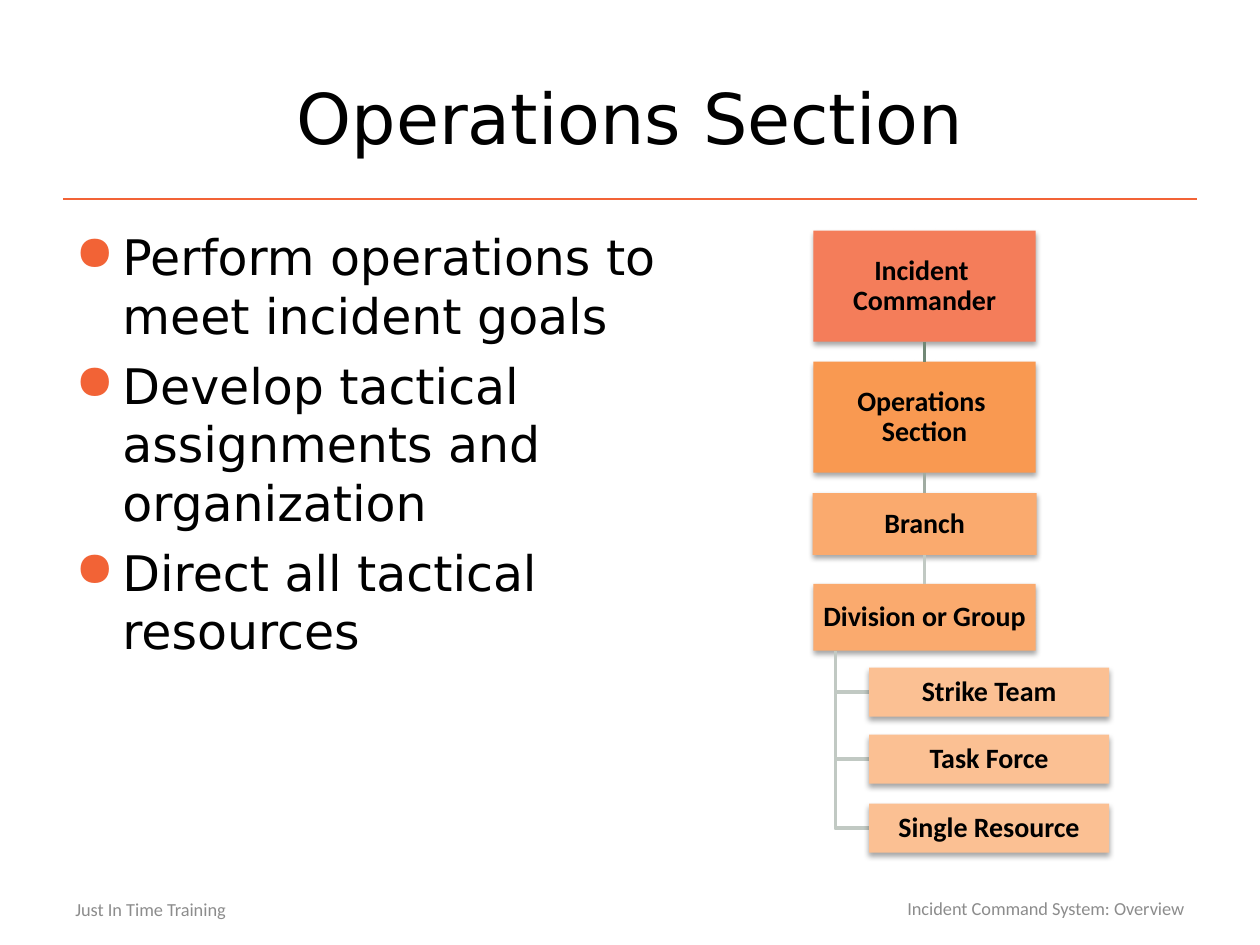
import pptx
import pptx.util
import pptx.dml.color
import pptx.enum.shapes
import pptx.enum.text
import pptx.oxml
import pptx.oxml.ns
from lxml import etree

Cm = pptx.util.Cm
Pt = pptx.util.Pt
ALIGN = pptx.enum.text.PP_ALIGN
ANCHOR = pptx.enum.text.MSO_ANCHOR

COLORS = {
    "accent": "F26336", "text": "000000", "footer": "8C8C8C",
    "commander": "F47D5A", "section": "F99951", "division": "FAAA6E", "team": "FBC093",
    "line_dark": "718876", "line_middle": "A0ACA2", "line_light": "C1C9C3",
}


def rgb(name):
    return pptx.dml.color.RGBColor.from_string(COLORS[name])


def add_element(parent, tag, **attributes):
    element = etree.SubElement(parent, pptx.oxml.ns.qn(tag))
    for key, value in attributes.items():
        element.set(key, value)
    return element


def write_text(shape, *texts, size, font="Calibri", color="text", bold=False,
               align=ALIGN.LEFT, anchor=ANCHOR.MIDDLE, line_spacing=None,
               space_before=0, bullet=None, margin=None):
    frame = shape.text_frame
    frame.word_wrap = True
    frame.vertical_anchor = anchor
    if margin is not None:
        frame.margin_left = frame.margin_right = Cm(margin)
        frame.margin_top = frame.margin_bottom = Cm(margin)
    for index, text in enumerate(texts):
        paragraph = frame.add_paragraph() if index else frame.paragraphs[0]
        paragraph.text = text
        if bullet:
            properties = paragraph._p.get_or_add_pPr()
            properties.set("marL", str(Cm(0.95)))
            properties.set("indent", str(-Cm(0.95)))
            add_element(add_element(properties, "a:buClr"), "a:srgbClr", val=COLORS["accent"])
            add_element(properties, "a:buChar", char=bullet)
        paragraph.alignment = align
        if line_spacing:
            paragraph.line_spacing = line_spacing
        if index and space_before:
            paragraph.space_before = Pt(space_before)
        for run in paragraph.runs:
            run.font.size = Pt(size)
            run.font.name = font
            run.font.bold = bold
            run.font.color.rgb = rgb(color)


def add_text(slide, left, top, width, height, *texts, **text_format):
    shape = slide.shapes.add_textbox(Cm(left), Cm(top), Cm(width), Cm(height))
    write_text(shape, *texts, **text_format)


def add_line(slide, left, top, right, bottom, color, width):
    line = slide.shapes.add_connector(
        pptx.enum.shapes.MSO_CONNECTOR.STRAIGHT, Cm(left), Cm(top), Cm(right), Cm(bottom))
    line.line.color.rgb = rgb(color)
    line.line.width = Pt(width)
    add_element(line._element.spPr, "a:effectLst")
    return line


def add_shadow(shape):
    shape.shadow.inherit = False
    effects = shape._element.spPr.find(pptx.oxml.ns.qn("a:effectLst"))
    shadow = add_element(effects, "a:outerShdw", blurRad=str(Pt(3.1)), dist=str(Pt(1.8)),
                         dir="5400000", rotWithShape="0")
    add_element(add_element(shadow, "a:srgbClr", val="000000"), "a:alpha", val="35000")


def add_unit(slide, left, top, width, height, text, fill):
    unit = slide.shapes.add_shape(
        pptx.enum.shapes.MSO_SHAPE.RECTANGLE, Cm(left), Cm(top), Cm(width), Cm(height))
    unit.fill.solid()
    unit.fill.fore_color.rgb = rgb(fill)
    unit.line.fill.background()
    add_shadow(unit)
    write_text(unit, text, size=16, bold=True, align=ALIGN.CENTER,
               line_spacing=0.9, margin=0.03)
    return unit


def add_branch_line(slide, left, top, right, bottom):
    builder = slide.shapes.build_freeform(Cm(left), Cm(top))
    builder.add_line_segments([(Cm(left), Cm(bottom)), (Cm(right), Cm(bottom))], close=False)
    shape = builder.convert_to_shape()
    shape.fill.background()
    shape.line.color.rgb = rgb("line_light")
    shape.line.width = Pt(2)
    shape.shadow.inherit = False


def add_header(slide, left, top, width, height):
    add_line(slide, left, top + height, left + width, top + height, "accent", 1.25)
    add_text(slide, left, top, width, 3.18, "Operations Section",
             size=40, font="DejaVu Sans", align=ALIGN.CENTER)


def add_duties(slide, left, top, width, height):
    add_text(slide, left, top, width, height,
             "Perform operations to meet incident goals",
             "Develop tactical assignments and organization",
             "Direct all tactical resources",
             size=28, font="DejaVu Sans", anchor=ANCHOR.TOP, space_before=6, bullet="●")


def add_organization(slide, left, top, width):
    chain_width = 4.52
    center = left + chain_width / 2
    chain = [
        ("Incident \vCommander", 0, 4.48, 2.24, "commander", None),
        ("Operations \vSection", 2.64, 4.48, 2.24, "section", "line_dark"),
        ("Branch", 5.29, chain_width, 1.25, "division", "line_middle"),
        ("Division or Group", 7.12, 4.48, 1.35, "division", "line_light"),
    ]
    above = None
    chain_bottom = top
    for text, offset, unit_width, height, fill, line_color in chain:
        unit = add_unit(slide, center - unit_width / 2, top + offset, unit_width, height,
                        text, fill)
        if above:
            line = add_line(slide, center, chain_bottom, center, top + offset, line_color, 2)
            line.begin_connect(above, 2)
            line.end_connect(unit, 0)
        above = unit
        chain_bottom = top + offset + height

    team_width, team_height = 4.84, 0.99
    team_left = left + width - team_width
    for text, offset in [("Strike Team", 8.81), ("Task Force", 10.16), ("Single Resource", 11.55)]:
        add_branch_line(slide, left + 0.46, chain_bottom, team_left,
                        top + offset + team_height / 2)
        add_unit(slide, team_left, top + offset, team_width, team_height, text, "team")


def add_footer(slide, left, top, width, height):
    right_width = 8.05
    add_text(slide, left, top, 5.92, height + 0.05, "Just In Time Training",
             size=10.5, color="footer")
    add_text(slide, left + width - right_width, top, right_width, height,
             "Incident Command System: Overview", size=10.5, color="footer", align=ALIGN.RIGHT)


def main():
    presentation = pptx.Presentation()
    presentation.slide_width = Cm(25.4)
    presentation.slide_height = Cm(19.05)
    slide = presentation.slides.add_slide(presentation.slide_layouts[6])
    add_header(slide, 1.27, 0.76, 22.86, 3.25)
    add_organization(slide, 16.38, 4.65, 5.98)
    add_duties(slide, 1.27, 4.45, 13.54, 12.57)
    add_footer(slide, 1.27, 17.98, 22.86, 0.64)
    presentation.save("out.pptx")


if __name__ == "__main__":
    main()
